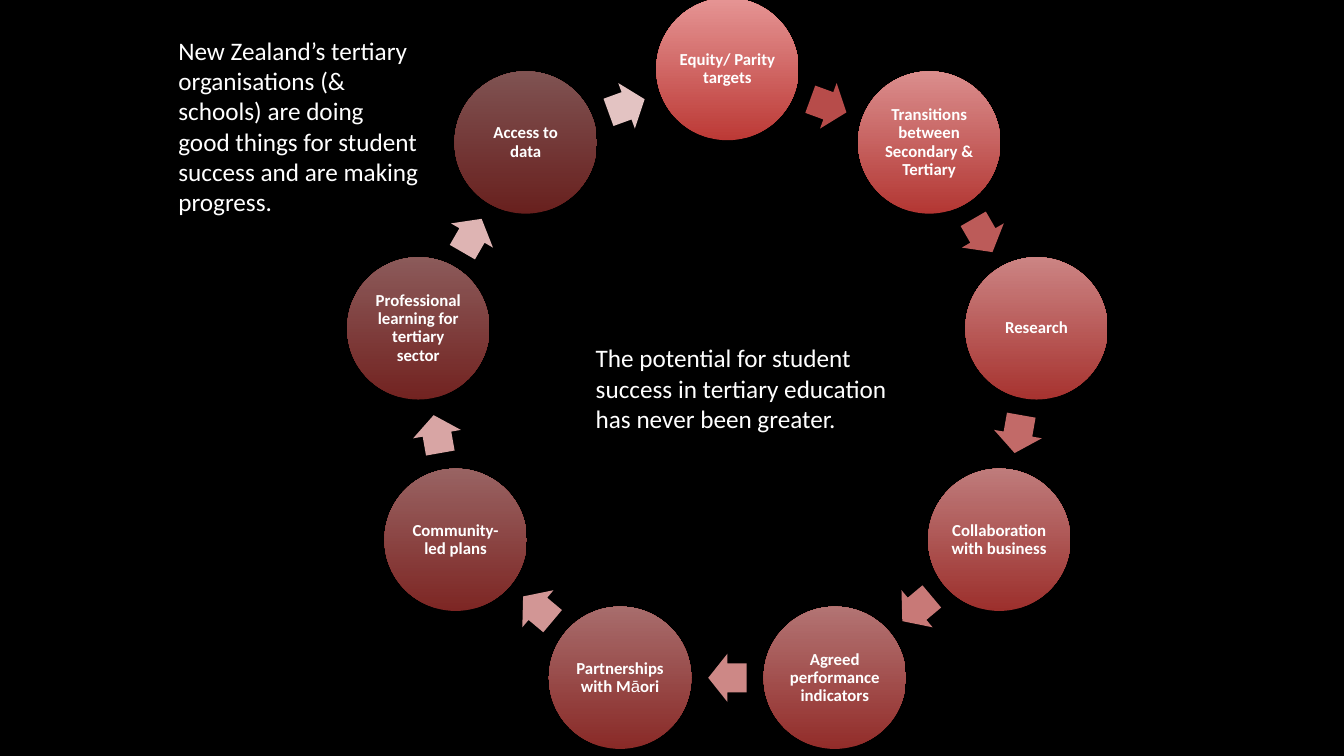
from dataclasses import dataclass
from math import cos, radians, sin

from lxml.etree import SubElement
from pptx import Presentation
from pptx.dml.color import RGBColor
from pptx.enum.shapes import MSO_SHAPE
from pptx.enum.text import MSO_ANCHOR, MSO_AUTO_SIZE, PP_ALIGN
from pptx.oxml.ns import qn
from pptx.util import Inches, Pt


@dataclass(frozen=True)
class Theme:
    background: str = "000000"
    text: str = "FFFFFF"
    circle_bottom: str = "D1403C"
    circle_top: str = "FFA6A5"
    first_arrow: str = "B74C4A"
    last_arrow: str = "E3C3C2"
    font: str = "Calibri"
    macron_font: str = "Arial"
    statement_size: int = 18
    circle_size: int = 12


THEME = Theme()
PROGRESS = ("New Zealand’s tertiary organisations (& schools) are doing good things "
            "for student success and are making progress.")
POTENTIAL = "The potential for student success in tertiary education has never been greater."
STEPS = [
    "Equity/ Parity targets",
    "Transitions between Secondary & Tertiary",
    "Research",
    "Collaboration with business",
    "Agreed performance indicators",
    "Partnerships with Māori",
    "Community-led plans",
    "Professional learning for tertiary sector",
    "Access to data",
]


def mix(start, end, share):
    pairs = zip(RGBColor.from_string(start), RGBColor.from_string(end))
    return RGBColor(*(round(low + (high - low) * share) for low, high in pairs))


def style_font(font, size, bold=False):
    font.name = THEME.font
    font.size = Pt(size)
    font.bold = bold
    font.color.rgb = RGBColor.from_string(THEME.text)


def add_statement(page, text, left, top, width, height):
    box = page.shapes.add_textbox(*map(Inches, (left, top, width, height)))
    frame = box.text_frame
    frame.word_wrap = True
    frame.auto_size = MSO_AUTO_SIZE.SHAPE_TO_FIT_TEXT
    para = frame.paragraphs[0]
    para.add_run().text = text
    style_font(para.font, THEME.statement_size)


def add_centred(page, kind, centre, width, height):
    """Add a plain shape around its centre point."""
    x, y = centre
    shape = page.shapes.add_shape(kind, Inches(x - width / 2), Inches(y - height / 2),
                                  Inches(width), Inches(height))
    shape.shadow.inherit = False
    shape.line.fill.background()
    return shape


def fill_circle(circle, opacity):
    circle.fill.gradient()
    circle.fill.gradient_angle = 90
    for stop, colour in zip(circle.fill.gradient_stops, (THEME.circle_bottom, THEME.circle_top)):
        stop.color.rgb = RGBColor.from_string(colour)
    for colour in circle.fill._xPr.iter(qn("a:srgbClr")):
        SubElement(colour, qn("a:alpha"), val=str(opacity * 1000))


def write_label(circle, label):
    """Centre a bold label, with its macron letter in the plain second font."""
    frame = circle.text_frame
    frame.word_wrap = True
    frame.vertical_anchor = MSO_ANCHOR.MIDDLE
    frame.margin_left = frame.margin_right = Inches(0.02)
    frame.margin_top = frame.margin_bottom = Inches(0.02)
    para = frame.paragraphs[0]
    para.alignment = PP_ALIGN.CENTER
    para.line_spacing = 0.9
    style_font(para.font, THEME.circle_size, bold=True)
    before, macron, after = label.partition("ā")
    for part in filter(None, (before, macron, after)):
        span = para.add_run()
        span.text = part
        if part == macron:
            span.font.name = THEME.macron_font
            span.font.bold = False


def add_cycle(page, labels, left, top, size):
    """Place circles clockwise from the top, with an arrow midway between neighbours."""
    diameter = size * 0.185
    radius = size * 0.408
    step = 360 / len(labels)
    middle_x, middle_y = left + size / 2, top + diameter / 2 + radius

    def point(angle, distance):
        turn = radians(angle)
        return middle_x + distance * sin(turn), middle_y - distance * cos(turn)

    for index, label in enumerate(labels):
        angle = index * step
        circle = add_centred(page, MSO_SHAPE.OVAL, point(angle, radius), diameter, diameter)
        fill_circle(circle, 90 - 5 * index)
        write_label(circle, label)

        between = angle + step / 2
        arrow = add_centred(page, MSO_SHAPE.RIGHT_ARROW,
                            point(between, radius * cos(radians(step / 2))),
                            size * 0.05, size * 0.063)
        arrow.rotation = between
        arrow.adjustments[0], arrow.adjustments[1] = 0.6, 0.5
        arrow.fill.solid()
        arrow.fill.fore_color.rgb = mix(THEME.first_arrow, THEME.last_arrow,
                                        index / (len(labels) - 1))


def main():
    deck = Presentation()
    deck.slide_width, deck.slide_height = Inches(13.33), Inches(7.5)
    page = deck.slides.add_slide(deck.slide_layouts[6])
    page.background.fill.solid()
    page.background.fill.fore_color.rgb = RGBColor.from_string(THEME.background)
    add_statement(page, PROGRESS, 1.67, 0.3, 2.59, 2.22)
    add_cycle(page, STEPS, left=3.4, top=-0.02, size=7.63)
    add_statement(page, POTENTIAL, 5.81, 3.35, 3.21, 1.01)
    deck.save("out.pptx")


if __name__ == "__main__":
    main()
